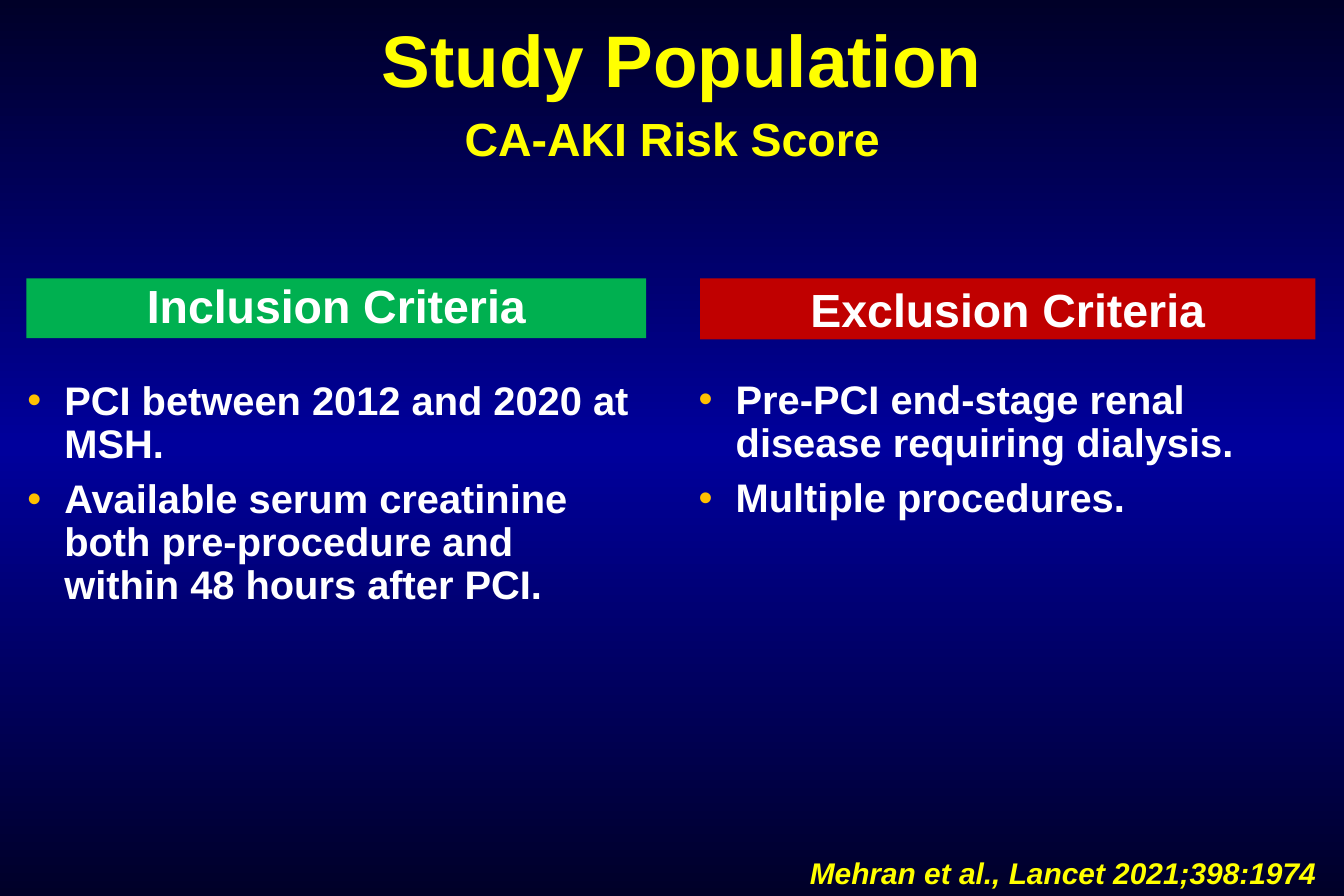
from copy import deepcopy

from lxml.etree import SubElement
from pptx import Presentation
from pptx.dml.color import RGBColor
from pptx.enum.shapes import MSO_SHAPE as Shape
from pptx.enum.text import MSO_ANCHOR as Anchor, PP_ALIGN as Align
from pptx.oxml.ns import qn
from pptx.util import Inches, Pt

WIDTH, HEIGHT = Inches(11.25), Inches(7.5)
YELLOW, WHITE, AMBER = "FFFF00", "FFFFFF", "FFC000"
BACKDROP = [(0, "000028"), (0.5, "00009C"), (1, "000028")]

# Boxes are left, top, width and height in percent of the slide.
HEADINGS = [
    ("Study Population", (1.52, 1.47, 98.48, 10),
     dict(size=44, align=Align.CENTER, anchor=Anchor.MIDDLE)),
    ("CA-AKI Risk Score", (23.47, 11.6, 53.07, 7.6),
     dict(size=28, align=Align.CENTER)),
    ("Mehran et al., Lancet 2021;398:1974", (59.38, 94.67, 40.62, 5.33),
     dict(size=18, italic=True)),
]
CRITERIA = [
    dict(title="Inclusion Criteria", fill="00B050", spacing=0.9,
         banner=(1.96, 31.07, 46.13, 6.67),
         items=["PCI between 2012 and 2020 at MSH.",
                "Available serum creatinine both pre-procedure and "
                "within 48 hours after PCI."],
         body=(1.16, 41.87, 47.29, 23.47)),
    dict(title="Exclusion Criteria", fill="C00000", spacing=1.0,
         banner=(52.09, 31.07, 45.78, 6.8),
         items=["Pre-PCI end-stage renal disease requiring dialysis.",
                "Multiple procedures."],
         body=(51.11, 41.73, 44.98, 16.93)),
]


def rgb(code):
    return RGBColor.from_string(code)


def place(box):
    left, top, width, height = (share / 100 for share in box)
    return (int(left * WIDTH), int(top * HEIGHT),
            int(width * WIDTH), int(height * HEIGHT))


def add_bullet(paragraph, color):
    props = paragraph._p.get_or_add_pPr()
    indent = Inches(0.31)
    props.set("marL", str(indent))
    props.set("indent", str(-indent))
    bullet_color = SubElement(props, qn("a:buClr"))
    SubElement(bullet_color, qn("a:srgbClr"), val=color)
    SubElement(props, qn("a:buFont"), typeface="Arial")
    SubElement(props, qn("a:buChar"), char="•")


def write(shape, lines, size, color=WHITE, italic=False, align=Align.LEFT,
          anchor=Anchor.TOP, spacing=1.0, gap=0, bullet=None):
    frame = shape.text_frame
    frame.word_wrap = True
    frame.vertical_anchor = anchor
    for index, line in enumerate(lines):
        paragraph = frame.add_paragraph() if index else frame.paragraphs[0]
        if bullet:
            add_bullet(paragraph, bullet)
        paragraph.alignment = align
        paragraph.line_spacing = spacing
        if index:
            paragraph.space_before = Pt(gap)
        run = paragraph.add_run()
        run.text = line
        font = run.font
        font.name, font.size = "Arial", Pt(size)
        font.bold, font.italic = True, italic
        font.color.rgb = rgb(color)


def paint_backdrop(slide):
    fill = slide.background.fill
    fill.gradient()
    fill.gradient_angle = 270
    first_stop = fill.gradient_stops[0]._gs
    first_stop.addnext(deepcopy(first_stop))
    for stop, (position, color) in zip(fill.gradient_stops, BACKDROP):
        stop.position = position
        stop.color.rgb = rgb(color)


def main():
    deck = Presentation()
    deck.slide_width, deck.slide_height = WIDTH, HEIGHT
    slide = deck.slides.add_slide(deck.slide_layouts[6])
    shapes = slide.shapes
    paint_backdrop(slide)

    for heading, box, style in HEADINGS:
        write(shapes.add_textbox(*place(box)), [heading], color=YELLOW, **style)

    for group in CRITERIA:
        banner = shapes.add_shape(Shape.RECTANGLE, *place(group["banner"]))
        banner.shadow.inherit = False
        banner.fill.solid()
        banner.fill.fore_color.rgb = rgb(group["fill"])
        banner.line.fill.background()
        write(banner, [group["title"]], size=28, align=Align.CENTER,
              anchor=Anchor.MIDDLE, spacing=group["spacing"])
        write(shapes.add_textbox(*place(group["body"])), group["items"],
              size=24, spacing=0.9, gap=7.5, bullet=AMBER)

    deck.save("out.pptx")


if __name__ == "__main__":
    main()
